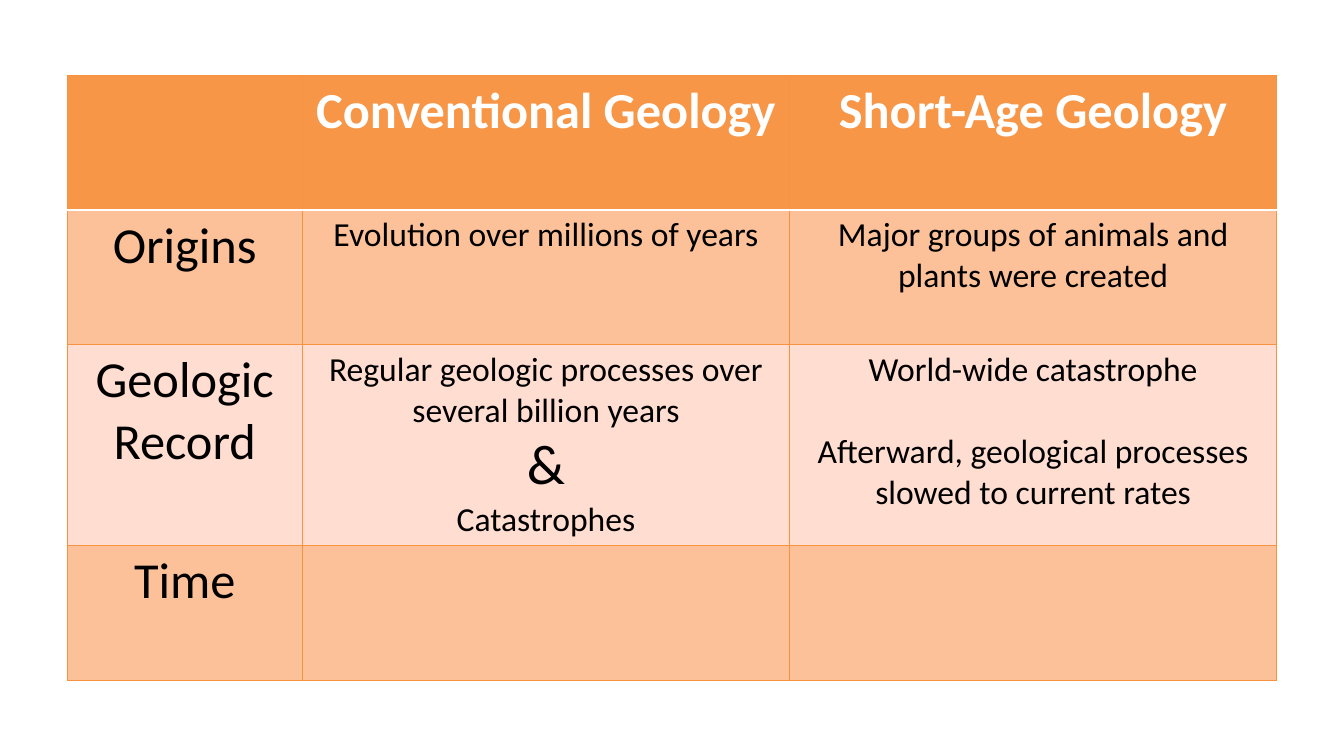
from dataclasses import dataclass

from lxml.etree import SubElement
from pptx import Presentation
from pptx.dml.color import RGBColor
from pptx.enum.text import PP_ALIGN
from pptx.oxml.ns import qn
from pptx.table import _Cell
from pptx.util import Pt

WHITE = RGBColor(0xFF, 0xFF, 0xFF)
BLACK = RGBColor(0x00, 0x00, 0x00)
HEADER_ORANGE = RGBColor(0xF7, 0x96, 0x46)
BAND_DARK = RGBColor(0xFC, 0xC1, 0x99)
BAND_LIGHT = RGBColor(0xFF, 0xDD, 0xD0)
BORDER_ORANGE = RGBColor(0xF6, 0x92, 0x40)

COLUMN_WIDTHS = (168, 348, 348)
ROW_HEIGHTS = (96, 96, 140, 96)


@dataclass(frozen=True)
class Line:
    text: str
    size: float = 24
    space_before: float = 0


def heading(text: str) -> Line:
    return Line(text, size=36)


@dataclass(frozen=True)
class ComparisonRow:
    fill: RGBColor
    cells: tuple[tuple[Line, ...], ...]
    is_header: bool = False


ROWS = (
    ComparisonRow(
        HEADER_ORANGE,
        ((), (heading("Conventional Geology"),), (heading("Short-Age Geology"),)),
        is_header=True,
    ),
    ComparisonRow(
        BAND_DARK,
        (
            (heading("Origins"),),
            (Line("Evolution over millions of years"),),
            (Line("Major groups of animals and plants were created"),),
        ),
    ),
    ComparisonRow(
        BAND_LIGHT,
        (
            (heading("Geologic"), heading("Record")),
            (
                Line("Regular geologic processes over several billion years"),
                Line("&", size=40),
                Line("Catastrophes"),
            ),
            (
                Line("World-wide catastrophe"),
                Line("Afterward, geological processes slowed to current rates", space_before=29.3),
            ),
        ),
    ),
    ComparisonRow(BAND_DARK, ((heading("Time"),), (), ())),
)


def set_border(cell: _Cell, side: str, color: RGBColor, width: float) -> None:
    """Add one border; sides must be added in the order L, R, T, B, before the fill."""
    properties = cell._tc.get_or_add_tcPr()
    border = SubElement(properties, qn(f"a:ln{side}"), w=str(Pt(width)))
    solid_fill = SubElement(border, qn("a:solidFill"))
    SubElement(solid_fill, qn("a:srgbClr"), val=str(color))


def write_lines(cell: _Cell, lines: tuple[Line, ...], is_header: bool) -> None:
    for index, line in enumerate(lines):
        text_frame = cell.text_frame
        paragraph = text_frame.add_paragraph() if index else text_frame.paragraphs[0]
        paragraph.alignment = PP_ALIGN.CENTER
        paragraph.space_before = Pt(line.space_before)
        run = paragraph.add_run()
        run.text = line.text
        font_format = {"name": "Calibri", "size": Pt(line.size), "bold": is_header}
        for attribute, value in font_format.items():
            setattr(run.font, attribute, value)
        run.font.color.rgb = WHITE if is_header else BLACK


def main() -> None:
    presentation = Presentation()
    presentation.slide_width, presentation.slide_height = Pt(960), Pt(540)
    slide = presentation.slides.add_slide(presentation.slide_layouts[6])
    table = slide.shapes.add_table(
        len(ROWS), len(COLUMN_WIDTHS), Pt(48), Pt(54),
        Pt(sum(COLUMN_WIDTHS)), Pt(sum(ROW_HEIGHTS)),
    ).table
    for column, width in zip(table.columns, COLUMN_WIDTHS):
        column.width = Pt(width)
    for row, height in zip(table.rows, ROW_HEIGHTS):
        row.height = Pt(height)

    thin = (BORDER_ORANGE, 0.75)
    header_rule = (WHITE, 2)
    for row_index, row in enumerate(ROWS):
        borders = {
            "L": thin,
            "R": thin,
            "T": header_rule if row_index == 1 else thin,
            "B": header_rule if row.is_header else thin,
        }
        for column_index, lines in enumerate(row.cells):
            cell = table.cell(row_index, column_index)
            for side, (color, width) in borders.items():
                set_border(cell, side, color, width)
            cell.fill.solid()
            cell.fill.fore_color.rgb = row.fill
            write_lines(cell, lines, row.is_header)

    presentation.save("out.pptx")


if __name__ == "__main__":
    main()
